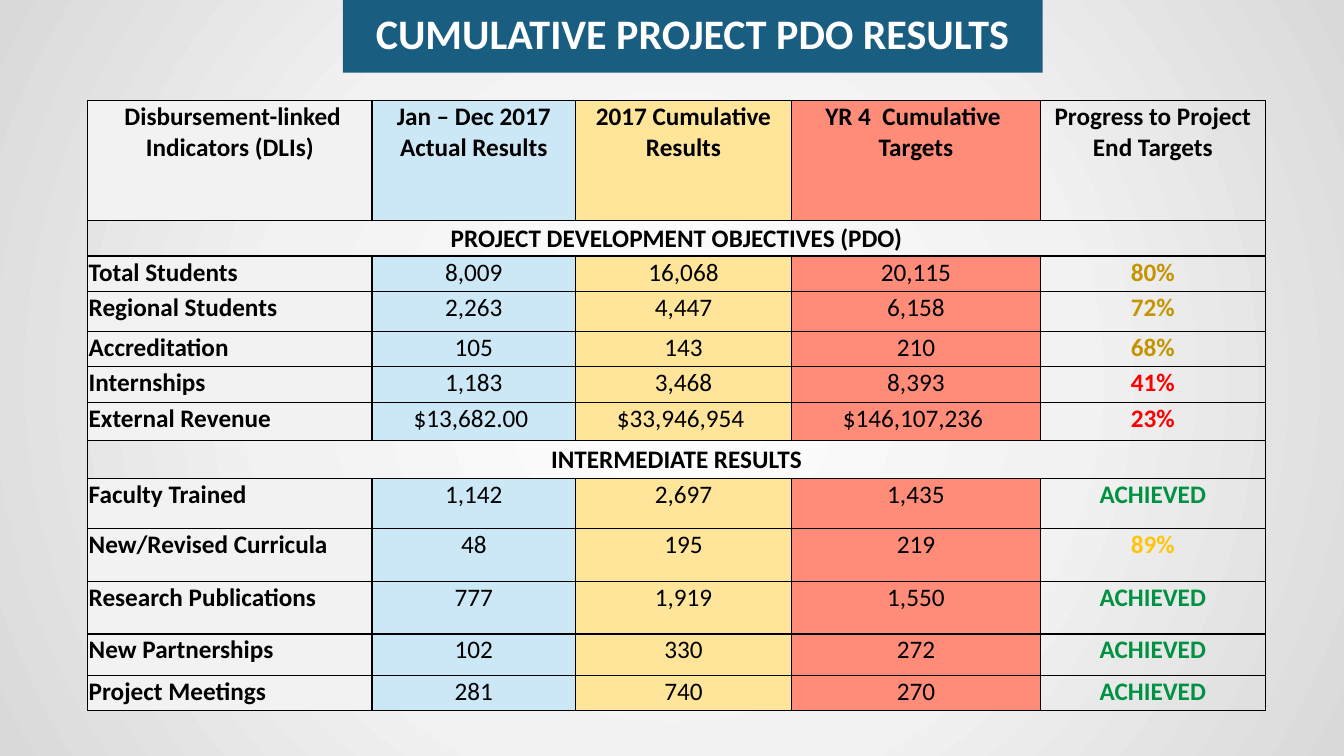
"""Build the slide with the table of cumulative project results."""
from dataclasses import dataclass
from typing import Any, Optional

from pptx import Presentation
from pptx.dml.color import RGBColor
from pptx.enum.text import MSO_ANCHOR, MSO_AUTO_SIZE, PP_ALIGN
from pptx.oxml import parse_xml
from pptx.oxml.ns import nsdecls, qn
from pptx.slide import Slide
from pptx.table import Table, _Cell
from pptx.util import Inches, Pt

AMBER, RED, GREEN, YELLOW = "C49500", "FF0000", "009242", "FFC50D"
BLACK, WHITE = "000000", "FFFFFF"
COLUMN_WIDTHS = (2.82, 2.02, 2.14, 2.47, 2.23)
COLUMN_FILLS = ("F2F2F2", "CCE7F5", "FFE599", "FE8C79", None)
BACKGROUND_STOPS = ((0, WHITE), (52, "F2F2F2"), (100, "D9D9D9"))
HEADINGS = (
    " Disbursement-linked Indicators (DLIs)",
    "Jan – Dec 2017 Actual Results",
    "2017 Cumulative Results",
    "YR 4  Cumulative  Targets",
    "Progress to Project End Targets",
)


@dataclass(frozen=True)
class ResultRow:
    """A row of the table; a section row has one text only."""

    height: float
    texts: tuple[str, ...]
    progress_colour: str = BLACK
    is_heading: bool = False


ROWS = (
    ResultRow(1.19, HEADINGS, is_heading=True),
    ResultRow(0.35, ("PROJECT DEVELOPMENT OBJECTIVES (PDO)",)),
    ResultRow(0.35, ("Total Students", "8,009", "16,068", "20,115", "80%"), AMBER),
    ResultRow(0.4, ("Regional Students", "2,263", "4,447", "6,158", "72%"), AMBER),
    ResultRow(0.35, ("Accreditation", "105", "143", "210", "68%"), AMBER),
    ResultRow(0.35, ("Internships", "1,183", "3,468", "8,393", "41%"), RED),
    ResultRow(0.38, ("External Revenue", "$13,682.00 ", "$33,946,954 ", "$146,107,236 ", "23%"), RED),
    ResultRow(0.38, ("INTERMEDIATE RESULTS",)),
    ResultRow(0.49, ("Faculty Trained", "1,142", "2,697", "1,435", "ACHIEVED"), GREEN),
    ResultRow(0.53, ("New/Revised Curricula", "48", "195", "219", "89%"), YELLOW),
    ResultRow(0.52, ("Research Publications", "777", "1,919", "1,550", "ACHIEVED"), GREEN),
    ResultRow(0.41, ("New Partnerships", "102", "330", "272", "ACHIEVED"), GREEN),
    ResultRow(0.35, ("Project Meetings", "281", "740", "270", "ACHIEVED"), GREEN),
)


def apply_format(target: Any, values: dict[str, Any]) -> None:
    """Set each named attribute of the target."""
    for name, value in values.items():
        setattr(target, name, value)


def paint(fill: Any, colour: Optional[str]) -> None:
    """Fill with a hex colour, or leave clear when there is none."""
    if colour is None:
        fill.background()
    else:
        fill.solid()
        fill.fore_color.rgb = RGBColor.from_string(colour)


def write(frame: Any, text: str, size: float, colour: str, bold: bool, align: PP_ALIGN) -> None:
    """Write one formatted paragraph into a text frame."""
    paragraph = frame.paragraphs[0]
    paragraph.alignment = align
    run = paragraph.add_run()
    run.text = text
    apply_format(run.font, {"name": "Calibri", "size": Pt(size), "bold": bold})
    paint(run.font.fill, colour)


def set_background(slide: Slide) -> None:
    """Give the slide a gradient that darkens from its centre."""
    paint(slide.background.fill, WHITE)
    stops = "".join(
        f'<a:gs pos="{position * 1000}"><a:srgbClr val="{colour}"/></a:gs>'
        for position, colour in BACKGROUND_STOPS
    )
    gradient = parse_xml(
        f'<a:gradFill {nsdecls("a")} rotWithShape="1"><a:gsLst>{stops}</a:gsLst>'
        '<a:path path="circle"><a:fillToRect l="50000" t="50000" r="50000" b="50000"/>'
        "</a:path></a:gradFill>"
    )
    properties = slide.element.find(".//" + qn("p:bgPr"))
    properties.replace(properties[0], gradient)


def add_title(slide: Slide) -> None:
    """Place and format the title banner."""
    banner = slide.shapes.title
    place = {"left": Inches(3.4), "top": Inches(0), "width": Inches(6.94), "height": Inches(0.72)}
    apply_format(banner, place)
    paint(banner.fill, "195E81")
    frame = banner.text_frame
    apply_format(frame, {
        "word_wrap": True,
        "auto_size": MSO_AUTO_SIZE.NONE,
        "vertical_anchor": MSO_ANCHOR.MIDDLE,
    })
    write(frame, "CUMULATIVE PROJECT PDO RESULTS", 30, WHITE, True, PP_ALIGN.CENTER)
    frame.paragraphs[0].line_spacing = 0.9


def prepare_cell(cell: _Cell, colour: Optional[str], anchor: MSO_ANCHOR) -> None:
    """Set the margins, borders and fill of a cell."""
    apply_format(cell, {
        "margin_left": Inches(0.01),
        "margin_top": Inches(0.01),
        "margin_right": Inches(0.01),
        "margin_bottom": Inches(0),
        "vertical_anchor": anchor,
    })
    properties = cell._tc.get_or_add_tcPr()
    for side in ("lnL", "lnR", "lnT", "lnB"):
        properties.append(parse_xml(
            f'<a:{side} {nsdecls("a")} w="{Pt(1)}"><a:solidFill>'
            f'<a:srgbClr val="{BLACK}"/></a:solidFill></a:{side}>'
        ))
    paint(cell.fill, colour)


def fill_row(table: Table, index: int, row: ResultRow) -> None:
    """Fill one row, merging it across when it is a section row."""
    table.rows[index].height = Inches(row.height)
    is_section = len(row.texts) == 1
    last = len(COLUMN_WIDTHS) - 1
    anchor = MSO_ANCHOR.MIDDLE if is_section else MSO_ANCHOR.TOP
    for column, colour in enumerate(COLUMN_FILLS):
        prepare_cell(table.cell(index, column), None if is_section else colour, anchor)
    if is_section:
        table.cell(index, 0).merge(table.cell(index, last))
    centred = is_section or row.is_heading
    for column, text in enumerate(row.texts):
        align = PP_ALIGN.CENTER if centred or column else PP_ALIGN.LEFT
        bold = row.is_heading or column in (0, last)
        colour = row.progress_colour if column == last else BLACK
        write(table.cell(index, column).text_frame, text, 18, colour, bold, align)


def add_results(slide: Slide) -> None:
    """Add the table of results."""
    table = slide.shapes.add_table(
        len(ROWS), len(COLUMN_WIDTHS), Inches(0.87), Inches(1),
        Inches(sum(COLUMN_WIDTHS)), Inches(sum(row.height for row in ROWS)),
    ).table
    apply_format(table, {"first_row": False, "horz_banding": False})
    for column, width in zip(table.columns, COLUMN_WIDTHS):
        column.width = Inches(width)
    for index, row in enumerate(ROWS):
        fill_row(table, index, row)


def main() -> None:
    """Build and save the presentation."""
    presentation = Presentation()
    apply_format(presentation, {"slide_width": Inches(13.33), "slide_height": Inches(7.5)})
    slide = presentation.slides.add_slide(presentation.slide_layouts.get_by_name("Title Only"))
    set_background(slide)
    add_title(slide)
    add_results(slide)
    presentation.save("out.pptx")


if __name__ == "__main__":
    main()
